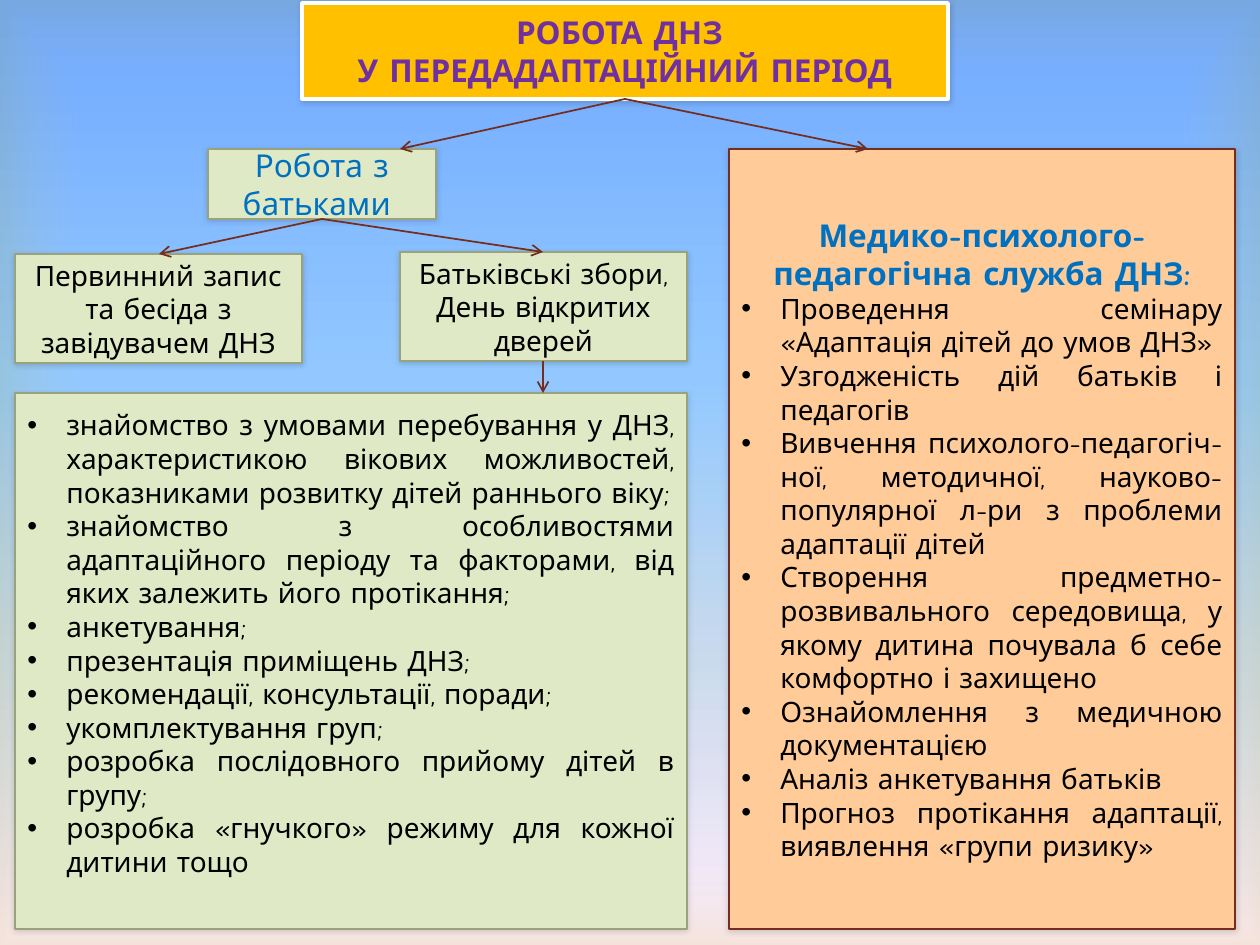
from lxml import etree
from pptx import Presentation
from pptx.dml.color import RGBColor
from pptx.enum.shapes import MSO_CONNECTOR, MSO_SHAPE
from pptx.enum.text import MSO_ANCHOR, MSO_AUTO_SIZE, PP_ALIGN
from pptx.oxml import parse_xml
from pptx.oxml.ns import nsdecls, qn
from pptx.util import Emu, Pt

RECTANGLE = MSO_SHAPE.RECTANGLE
STRAIGHT = MSO_CONNECTOR.STRAIGHT
MIDDLE = MSO_ANCHOR.MIDDLE
NO_AUTOFIT = MSO_AUTO_SIZE.NONE
CENTER, JUSTIFY = PP_ALIGN.CENTER, PP_ALIGN.JUSTIFY

FONT = "Comic Neue"
GREEN, OLIVE = "DFE9C5", "98A27C"
BROWN, BLUE, BLACK = "742E1F", "0070C0", "000000"
BULLET_INDENT = 39
SKY = [(0, "5E9EFF", 100), (40, "85C2FF", 100), (70, "C4D6EB", 100), (100, "FFEBFA", 100)]
VIGNETTE = [(83, "FFFFFF", 11), (100, "D1CA75", 23)]

PARENT_TASKS = [
    "знайомство з умовами перебування у ДНЗ, характеристикою вікових можливостей, "
    "показниками розвитку дітей раннього віку;",
    "знайомство з особливостями адаптаційного періоду та факторами, "
    "від яких залежить його протікання;",
    "анкетування; ",
    "презентація приміщень ДНЗ;",
    "рекомендації, консультації, поради;",
    "укомплектування груп; ",
    "розробка послідовного прийому дітей в групу;",
    "розробка «гнучкого» режиму для кожної дитини тощо",
]
SERVICE_TASKS = [
    "Проведення семінару «Адаптація дітей до умов ДНЗ»",
    "Узгодженість дій батьків і педагогів ",
    "Вивчення психолого-педагогіч-ної, методичної, науково-популярної л-ри "
    "з проблеми адаптації дітей",
    "Створення предметно-розвивального середовища, у якому дитина почувала б себе "
    "комфортно і захищено",
    "Ознайомлення з медичною документацією",
    "Аналіз анкетування батьків",
    "Прогноз протікання адаптації, виявлення «групи ризику»",
]
ARROWS = [
    (625, 99, 400, 149),
    (625, 99, 868, 149),
    (322, 219, 159, 254),
    (322, 219, 543, 252),
    (543, 361, 543, 393),
]


def px(length):
    """Turn px into EMU at 126 px to the inch."""
    return Emu(round(length * 914400 / 126))


def rgb(code):
    """Turn a hex string into a colour."""
    return RGBColor.from_string(code)


def gradient(stops, direction):
    """Build a gradient fill from (position, colour, opacity) stops."""
    stop_xml = "".join(
        f'<a:gs pos="{place * 1000}"><a:srgbClr val="{code}">'
        f'<a:alpha val="{opacity * 1000}"/></a:srgbClr></a:gs>'
        for place, code, opacity in stops
    )
    return parse_xml(
        f'<a:gradFill {nsdecls("a")} rotWithShape="1">'
        f"<a:gsLst>{stop_xml}</a:gsLst>{direction}</a:gradFill>"
    )


def swap_gradient(fill, parent, stops, direction):
    """Replace the stock gradient of a fill with the given one."""
    fill.gradient()
    stock = parent.find(qn("a:gradFill"))
    parent.replace(stock, gradient(stops, direction))


def paint_backdrop(slide):
    """Paint the sky background and the soft vignette over it."""
    fill = slide.background.fill
    fill.gradient()
    background = slide.element.find(".//" + qn("p:bgPr"))
    swap_gradient(fill, background, SKY, '<a:lin ang="5400000" scaled="0"/>')
    vignette = slide.shapes.add_shape(RECTANGLE, 0, 0, px(1260), px(945))
    vignette.shadow.inherit = False
    vignette.line.fill.background()
    swap_gradient(
        vignette.fill, vignette.element.spPr, VIGNETTE,
        '<a:path path="rect"><a:fillToRect l="50000" t="50000" r="50000" b="50000"/></a:path>',
    )
    slide.shapes.element.insert(2, vignette.element)


def style_panel(panel, fill, outline, width=1):
    """Give a panel its fill, outline, soft shadow and text frame settings."""
    panel.fill.solid()
    panel.fill.fore_color.rgb = rgb(fill)
    panel.line.color.rgb = rgb(outline)
    panel.line.width = Pt(width)
    panel.shadow.inherit = False
    effects = panel.element.spPr.find(qn("a:effectLst"))
    effects.append(parse_xml(
        f'<a:outerShdw {nsdecls("a")} blurRad="{Pt(3)}" dist="{Pt(1)}" dir="5400000" '
        'rotWithShape="0"><a:srgbClr val="000000"><a:alpha val="15000"/></a:srgbClr>'
        "</a:outerShdw>"
    ))
    frame = panel.text_frame
    frame.word_wrap = True
    frame.auto_size = NO_AUTOFIT
    frame.vertical_anchor = MIDDLE


def add_panel(slide, box, fill=GREEN, outline=OLIVE):
    """Add a panel and return its text frame."""
    panel = slide.shapes.add_shape(RECTANGLE, *map(px, box))
    style_panel(panel, fill, outline)
    return panel.text_frame


def write(frame, text, size, color, bold=False, align=CENTER):
    """Write one paragraph, using the empty first one when there is one."""
    last = frame.paragraphs[-1]
    paragraph = frame.add_paragraph() if last.runs else last
    paragraph.alignment = align
    run = paragraph.add_run()
    run.text = text
    run.font.name = FONT
    run.font.size = Pt(size)
    run.font.bold = bold
    run.font.color.rgb = rgb(color)
    return paragraph


def write_bullets(frame, tasks):
    """Write a justified bulleted list."""
    for task in tasks:
        properties = write(frame, task, 16, BLACK, align=JUSTIFY)._p.get_or_add_pPr()
        properties.set("marL", str(px(BULLET_INDENT)))
        properties.set("indent", str(-px(BULLET_INDENT)))
        etree.SubElement(properties, qn("a:buFont"), typeface="Arial")
        etree.SubElement(properties, qn("a:buChar"), char="•")


def add_title(slide):
    """Place and format the slide title."""
    title = slide.shapes.title
    title.left, title.top, title.width, title.height = map(px, (302, 3, 646, 96))
    style_panel(title, "FFC000", "FFFFFF", 2)
    for line in ("РОБОТА ДНЗ ", "У ПЕРЕДАДАПТАЦІЙНИЙ ПЕРІОД"):
        write(title.text_frame, line, 18, "7030A0", bold=True)


def add_arrow(slide, ends):
    """Add a straight arrow between two points."""
    arrow = slide.shapes.add_connector(STRAIGHT, *map(px, ends))
    arrow.line.color.rgb = rgb(BROWN)
    arrow.line.width = Pt(1)
    etree.SubElement(arrow.line._get_or_add_ln(), qn("a:tailEnd"), type="arrow")
    etree.SubElement(arrow.element.spPr, qn("a:effectLst"))


def main():
    """Build the slide and save it."""
    deck = Presentation()
    deck.slide_width, deck.slide_height = px(1260), px(945)
    slide = deck.slides.add_slide(deck.slide_layouts[5])
    paint_backdrop(slide)
    add_title(slide)

    write(add_panel(slide, (208, 149, 228, 70)), "Робота з батьками ", 18, BLUE)
    write(add_panel(slide, (15, 254, 287, 109)),
          "Первинний запис та бесіда з завідувачем ДНЗ", 16, BLACK)
    write(add_panel(slide, (400, 252, 287, 109)),
          "Батьківські збори, День відкритих дверей", 16, BLACK)

    service = add_panel(slide, (729, 149, 506, 780), "FFCC99", BROWN)
    write(service, "Медико-психолого-педагогічна служба ДНЗ:", 18, BLUE, bold=True)
    write_bullets(service, SERVICE_TASKS)

    parents = add_panel(slide, (15, 393, 672, 536))
    parents.margin_bottom = px(42)
    write_bullets(parents, PARENT_TASKS)

    for ends in ARROWS:
        add_arrow(slide, ends)
    deck.save("out.pptx")


if __name__ == "__main__":
    main()
